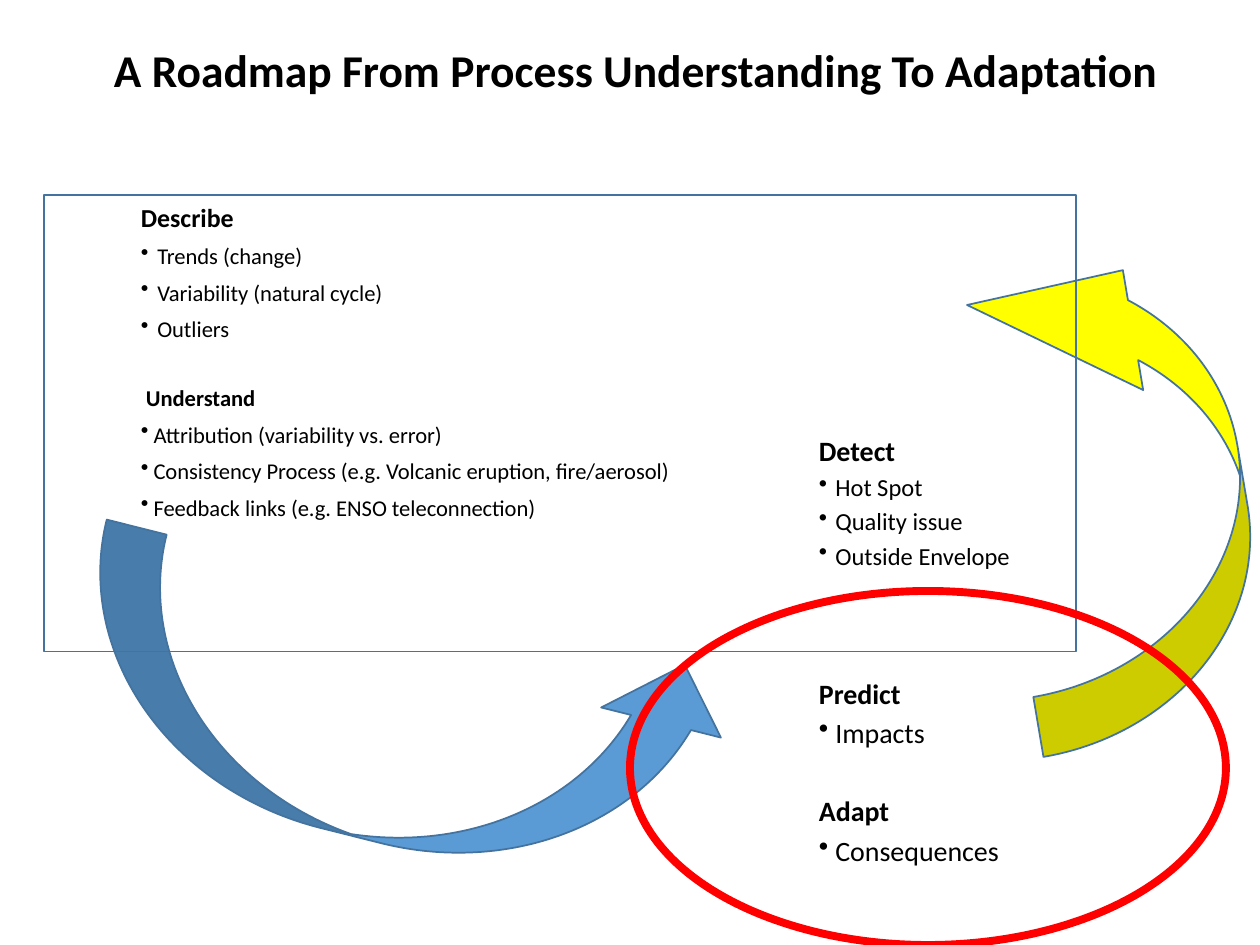
"""Build the slide on the roadmap from process understanding to adaptation."""
import pptx
import pptx.dml.color
import pptx.enum.shapes
import pptx.enum.text
import pptx.oxml.ns
import pptx.util
from dataclasses import dataclass
from lxml import etree

Inches = pptx.util.Inches
Pt = pptx.util.Pt
Color = pptx.dml.color.RGBColor.from_string
Kind = pptx.enum.shapes.MSO_SHAPE


@dataclass(frozen=True)
class Theme:
    font: str = "Calibri"
    text: str = "000000"
    paper: str = "FFFFFF"
    edge: str = "43739E"
    blue: str = "5B9BD5"
    yellow: str = "FFFF00"
    red: str = "FF0000"
    title: float = 26
    lead: float = 14.8
    body: float = 12.9
    head: float = 16
    note: float = 14


theme = Theme()


def add_shape(kind, left, top, width, height, fill, line, weight, turn=0):
    shape = slide.shapes.add_shape(
        kind, Inches(left), Inches(top), Inches(width), Inches(height))
    shape.shadow.inherit = False
    shape.rotation = turn
    if fill:
        shape.fill.solid()
        shape.fill.fore_color.rgb = Color(fill)
    else:
        shape.fill.background()
    shape.line.color.rgb = Color(line)
    shape.line.width = Pt(weight)
    return shape


def add_list(left, top, width, height, inset, pitch, rows):
    box = slide.shapes.add_textbox(
        Inches(left), Inches(top), Inches(width), Inches(height))
    frame = box.text_frame
    frame.word_wrap = True
    frame.margin_left = Inches(inset)
    for index, (text, size, bold, space, indent) in enumerate(rows):
        para = frame.add_paragraph() if index else frame.paragraphs[0]
        para.text = text
        para.line_spacing = pitch
        para.space_before = Pt(space)
        props = para._p.get_or_add_pPr()
        props.set("marL", str(Inches(indent)))
        if not bold:
            props.set("indent", str(-Inches(indent)))
            mark = etree.SubElement(props, pptx.oxml.ns.qn("a:buChar"))
            mark.set("char", "•")
        font = para.runs[0].font
        font.name = theme.font
        font.size = Pt(size)
        font.bold = bold
        font.color.rgb = Color(theme.text)


deck = pptx.Presentation()
deck.slide_width = Inches(10)
deck.slide_height = Inches(7.5)
slide = deck.slides.add_slide(deck.slide_layouts[5])

title = slide.shapes.title
title.left, title.top = Inches(0), Inches(-0.03)
title.width, title.height = Inches(10), Inches(0.8)
title.fill.solid()
title.fill.fore_color.rgb = Color(theme.paper)
frame = title.text_frame
frame.text = "A Roadmap From Process Understanding To Adaptation"
frame.word_wrap = True
frame.auto_size = pptx.enum.text.MSO_AUTO_SIZE.NONE
frame.vertical_anchor = pptx.enum.text.MSO_ANCHOR.BOTTOM
frame.margin_left = Inches(0.1)
frame.margin_top = frame.margin_right = frame.margin_bottom = 0
para = frame.paragraphs[0]
para.alignment = pptx.enum.text.PP_ALIGN.CENTER
para.line_spacing = 0.9
font = para.runs[0].font
font.name = theme.font
font.size = Pt(theme.title)
font.bold = True
font.color.rgb = Color(theme.text)

add_shape(Kind.CURVED_RIGHT_ARROW, 2.16, 3.1, 1.96, 5.22,
          theme.blue, theme.edge, 1, 284.1)

add_list(1.02, 1.62, 5.32, 2.61, 0.1, 0.7, [
    ("Describe", theme.lead, True, 0, 0),
    ("Trends (change)", theme.body, False, 10, 0.13),
    ("Variability (natural cycle)", theme.body, False, 10, 0.13),
    ("Outliers", theme.body, False, 10, 0.13),
    ("Understand", theme.body, True, 28.6, 0.04),
    ("Attribution (variability vs. error)", theme.body, False, 10, 0.1),
    ("Consistency Process (e.g. Volcanic eruption, fire/aerosol)",
     theme.body, False, 10, 0.1),
    ("Feedback links (e.g. ENSO teleconnection)",
     theme.body, False, 10, 0.1),
])

loop = add_shape(Kind.CURVED_UP_ARROW, 6.83, 2.85, 4.12, 1.93,
                 theme.yellow, theme.edge, 1, 260.4)
for index, value in enumerate((0.25, 0.5, 0.656)):
    loop.adjustments[index] = value

add_list(6.5, 3.39, 3.07, 2.72, 0, 1.0, [
    ("Detect", theme.head, True, 0, 0),
    ("Hot Spot", theme.note, False, 2.8, 0.13),
    ("Quality issue", theme.note, False, 2.8, 0.13),
    ("Outside Envelope", theme.note, False, 2.8, 0.13),
    ("Predict", theme.head, True, 60.8, 0),
    ("Impacts", theme.head, False, 3.2, 0.13),
    ("Adapt", theme.head, True, 25.6, 0),
    ("Consequences", theme.head, False, 3.2, 0.13),
])

add_shape(Kind.RECTANGLE, 0.35, 1.55, 8.19, 3.62, None, theme.edge, 1)
add_shape(Kind.OVAL, 5, 4.69, 4.73, 2.81, None, theme.red, 4.5)

deck.save("out.pptx")
